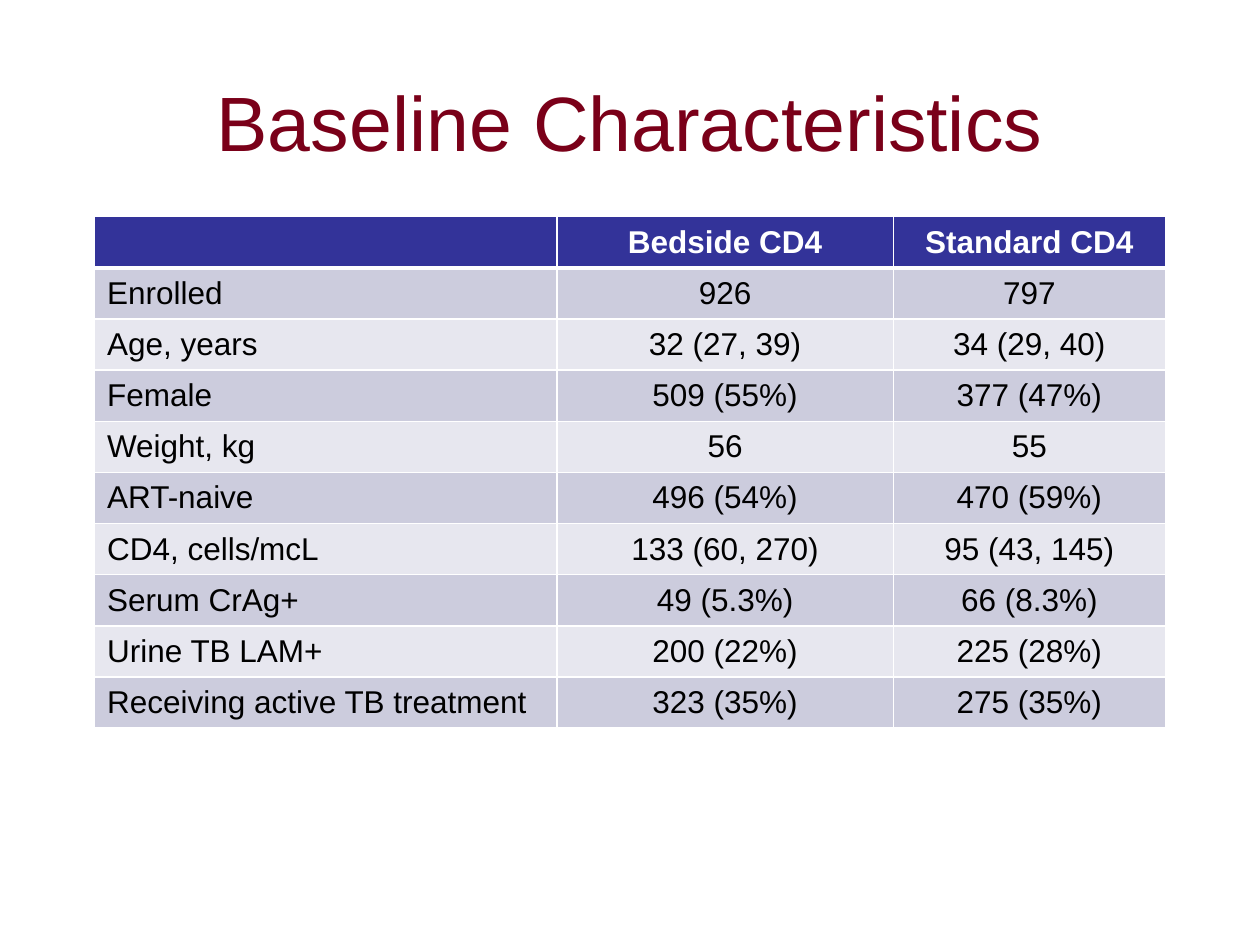
from dataclasses import dataclass

from lxml.etree import SubElement
from pptx import Presentation
from pptx.dml.color import RGBColor as Color
from pptx.enum.text import MSO_ANCHOR as Anchor, PP_ALIGN as Align
from pptx.oxml.ns import qn
from pptx.util import Inches, Pt


@dataclass(frozen=True)
class Theme:
    """Hold the colours, font and sizes of the slide."""
    font: str = "Arial"
    title: str = "7A0019"
    head: str = "333399"
    bands: tuple = ("CCCCDD", "E7E7EF")
    white: str = "FFFFFF"
    black: str = "000000"
    big: int = 44
    body: int = 18
    thin: int = 1
    thick: int = 3


THEME = Theme()
WIDTHS = (3.67, 2.67, 2.16)
ROWS = (
    ("", "Bedside CD4", "Standard CD4"),
    ("Enrolled", "926", "797"),
    ("Age, years", "32 (27, 39)", "34 (29, 40)"),
    ("Female", "509 (55%)", "377 (47%)"),
    ("Weight, kg", "56", "55"),
    ("ART-naive", "496 (54%)", "470 (59%)"),
    ("CD4, cells/mcL", "133 (60, 270)", "95 (43, 145)"),
    ("Serum CrAg+", "49 (5.3%)", "66 (8.3%)"),
    ("Urine TB LAM+", "200 (22%)", "225 (28%)"),
    ("Receiving active TB treatment", "323 (35%)", "275 (35%)"),
)


def write(frame, text, size=THEME.body, color=THEME.black, bold=False, align=Align.CENTER):
    """Write one formatted paragraph into a text frame."""
    frame.word_wrap = True
    para = frame.paragraphs[0]
    para.alignment = align
    para.font.size = Pt(size)
    if text:
        run = para.add_run()
        run.text = text
        font = run.font
        font.name, font.size, font.bold = THEME.font, Pt(size), bold
        font.color.rgb = Color.from_string(color)


def edge(cell, side, width):
    """Draw one white border of a cell."""
    line = SubElement(cell._tc.get_or_add_tcPr(), qn(f"a:ln{side}"), w=str(Pt(width)))
    fill = SubElement(line, qn("a:solidFill"))
    SubElement(fill, qn("a:srgbClr"), val=THEME.white)


def add_title(slide, left, top, width, height):
    """Place the slide title in the given box."""
    box = slide.shapes.add_textbox(Inches(left), Inches(top), Inches(width), Inches(height))
    box.text_frame.vertical_anchor = Anchor.MIDDLE
    write(box.text_frame, "Baseline Characteristics", size=THEME.big, color=THEME.title)


def style_cell(cell, text, row, col):
    """Format and fill one cell by its place in the table."""
    head = row == 0
    sides = {
        "L": THEME.thin,
        "R": THEME.thin,
        "T": THEME.thick if row == 1 else THEME.thin,
        "B": THEME.thick if head else THEME.thin,
    }
    for side, width in sides.items():
        edge(cell, side, width)
    cell.fill.solid()
    shade = THEME.head if head else THEME.bands[(row - 1) % 2]
    cell.fill.fore_color.rgb = Color.from_string(shade)
    cell.vertical_anchor = Anchor.MIDDLE
    write(cell.text_frame, text, bold=head,
          color=THEME.white if head else THEME.black,
          align=Align.CENTER if head or col else Align.LEFT)


def add_grid(slide, left, top, width, height):
    """Place the table of patient data in the given box."""
    frame = slide.shapes.add_table(len(ROWS), len(WIDTHS), Inches(left), Inches(top),
                                   Inches(width), Inches(height))
    table = frame.table
    for column, share in zip(table.columns, WIDTHS):
        column.width = Inches(width * share / sum(WIDTHS))
    for row, texts in enumerate(ROWS):
        for col, text in enumerate(texts):
            style_cell(table.cell(row, col), text, row, col)


def main():
    """Build the slide and save it."""
    deck = Presentation()
    deck.slide_width, deck.slide_height = Inches(10), Inches(7.5)
    slide = deck.slides.add_slide(deck.slide_layouts[6])
    add_title(slide, 0.75, 0.33, 8.5, 1.25)
    add_grid(slide, 0.75, 1.72, 8.5, 4.06)
    deck.save("out.pptx")


if __name__ == "__main__":
    main()
